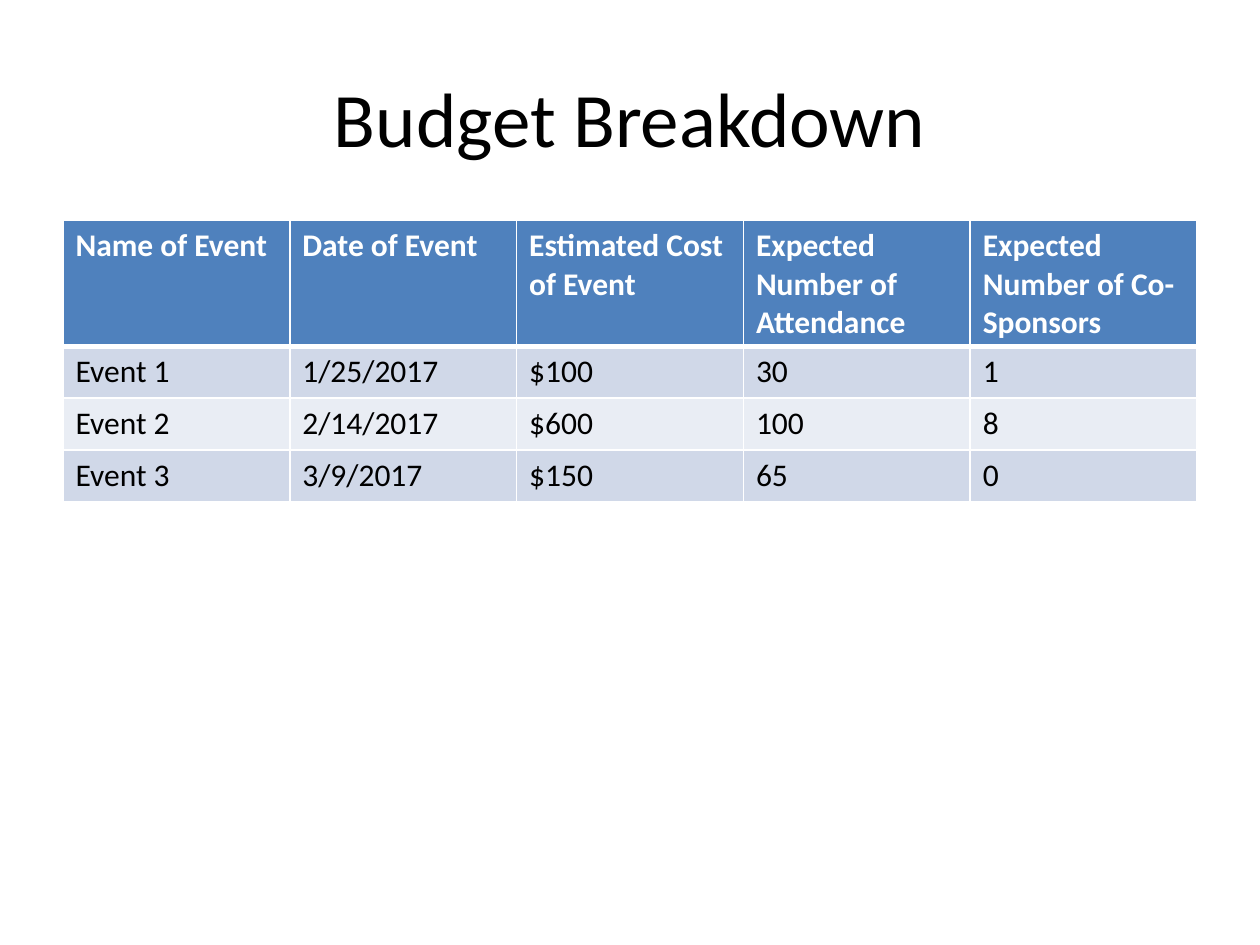
from pptx import Presentation
from pptx.dml.color import RGBColor
from pptx.enum.text import MSO_ANCHOR, PP_ALIGN
from pptx.oxml import parse_xml
from pptx.oxml.ns import nsdecls
from pptx.util import Inches, Pt

TITLE = "Budget Breakdown"
HEADER = [
    "Name of Event",
    "Date of Event",
    "Estimated Cost of Event",
    "Expected Number of Attendance",
    "Expected Number of Co-Sponsors",
]
EVENTS = [
    ("Event 1", "1/25/2017", "$100", "30", "1"),
    ("Event 2", "2/14/2017", "$600", "100", "8"),
    ("Event 3", "3/9/2017", "$150", "65", "0"),
]
THEME = {
    "font": "Calibri",
    "title_size": 44,
    "cell_size": 18,
    "text": "000000",
    "header_text": "FFFFFF",
    "header_fill": "4F81BD",
    "bands": ("D0D8E8", "E9EDF4"),
    "border": "FFFFFF",
}
LEFT, WIDTH = 0.5, 9
TITLE_TOP, TITLE_HEIGHT = 0.3, 1.25
TABLE_TOP, ROW_HEIGHT = 1.75, 0.41


def set_font(p, size, color, bold=False):
    p.font.name = THEME["font"]
    p.font.size = Pt(size)
    p.font.bold = bold
    p.font.color.rgb = RGBColor.from_string(color)


def set_borders(cell, **widths):
    tcPr = cell._tc.get_or_add_tcPr()
    for side, width in widths.items():
        tcPr.append(parse_xml(
            f'<a:ln{side} {nsdecls("a")} w="{Pt(width)}"><a:solidFill>'
            f'<a:srgbClr val="{THEME["border"]}"/></a:solidFill></a:ln{side}>'
        ))


def add_title(s):
    box = s.shapes.add_textbox(
        Inches(LEFT), Inches(TITLE_TOP), Inches(WIDTH), Inches(TITLE_HEIGHT))
    tf = box.text_frame
    tf.word_wrap = True
    tf.vertical_anchor = MSO_ANCHOR.MIDDLE
    p = tf.paragraphs[0]
    p.text = TITLE
    p.alignment = PP_ALIGN.CENTER
    set_font(p, THEME["title_size"], THEME["text"])


def add_budget_table(s):
    rows = [HEADER, *EVENTS]
    table = s.shapes.add_table(
        len(rows), len(HEADER), Inches(LEFT), Inches(TABLE_TOP),
        Inches(WIDTH), Inches(ROW_HEIGHT * len(rows))).table
    for i, values in enumerate(rows):
        is_header = i == 0
        fill = THEME["header_fill"] if is_header else THEME["bands"][(i - 1) % 2]
        color = THEME["header_text" if is_header else "text"]
        for j, value in enumerate(values):
            cell = table.cell(i, j)
            cell.text = value
            set_font(cell.text_frame.paragraphs[0], THEME["cell_size"], color, is_header)
            set_borders(cell, L=1, R=1, T=3 if i == 1 else 1, B=3 if is_header else 1)
            cell.fill.solid()
            cell.fill.fore_color.rgb = RGBColor.from_string(fill)


def main():
    """Build the budget breakdown slide."""
    prs = Presentation()
    prs.slide_width, prs.slide_height = Inches(10), Inches(7.5)
    s = prs.slides.add_slide(prs.slide_layouts[6])
    add_title(s)
    add_budget_table(s)
    prs.save("out.pptx")


if __name__ == "__main__":
    main()
